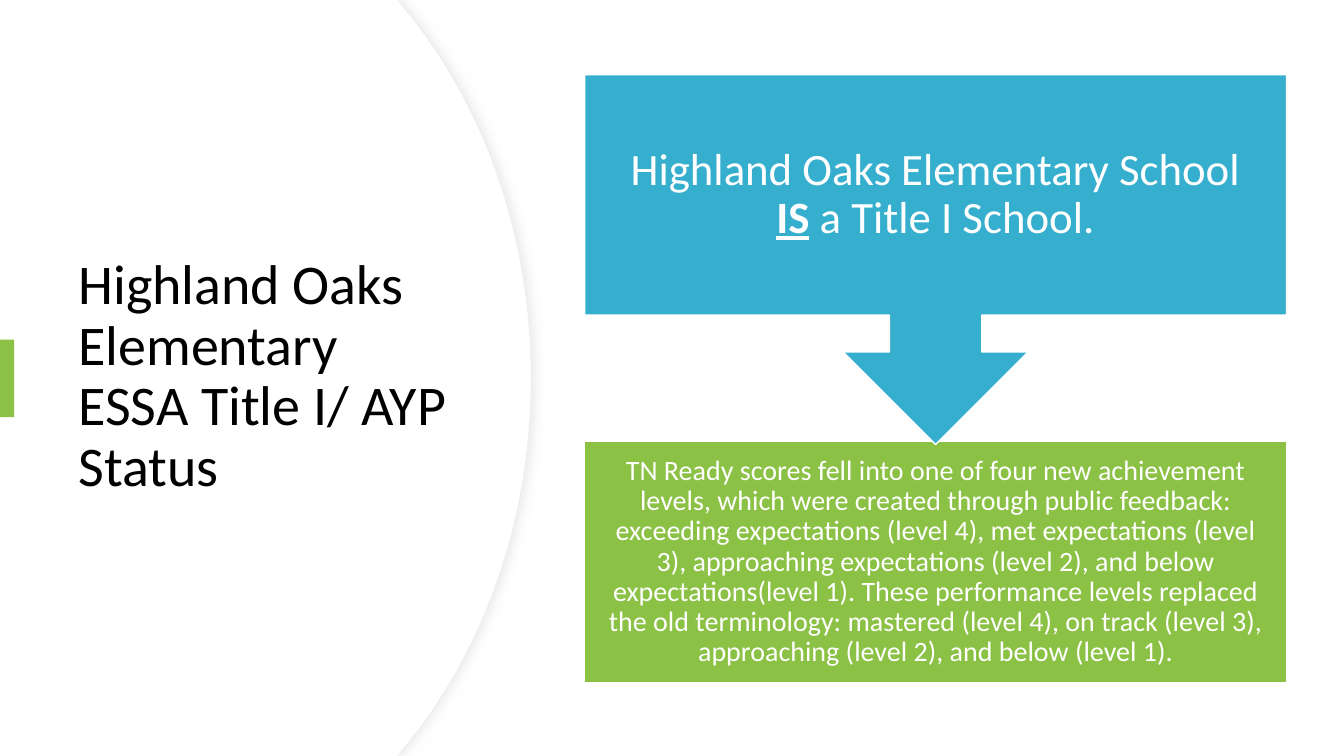
from lxml.etree import SubElement
from pptx import Presentation
from pptx.dml.color import RGBColor
from pptx.enum.shapes import MSO_SHAPE as Preset
from pptx.enum.text import MSO_ANCHOR as Anchor, PP_ALIGN as Align
from pptx.oxml.ns import qn
from pptx.util import Pt

PX = 9144  # 100 px to the inch
CURVE_STEPS = 24
COLORS = {"white": "FFFFFF", "black": "000000", "green": "8BC145",
          "blue": "36AFCE", "edge": "EFEFEF", "shade": "D9D9D9"}


def paint(shape, fill, line=None, width=1):
    shape.shadow.inherit = False
    shape.fill.solid()
    shape.fill.fore_color.rgb = RGBColor.from_string(COLORS[fill])
    if line:
        shape.line.color.rgb = RGBColor.from_string(COLORS[line])
        shape.line.width = Pt(width)
    else:
        shape.line.fill.background()


def write(shape, runs, size, color, align, inset):
    """Fill one paragraph with (text, emphasised) runs; None is a line break."""
    frame = shape.text_frame
    frame.word_wrap = True
    frame.vertical_anchor = Anchor.MIDDLE
    frame.margin_left = frame.margin_right = inset * PX
    frame.margin_top = frame.margin_bottom = inset * PX
    paragraph = frame.paragraphs[0]
    paragraph.alignment = align
    paragraph.line_spacing = 0.9
    for part in runs:
        if part is None:
            paragraph.add_line_break()
            continue
        text, emphasised = part
        run = paragraph.add_run()
        run.text = text
        font = run.font
        font.name = "Calibri"
        font.size = Pt(size)
        font.bold = font.underline = emphasised
        font.color.rgb = RGBColor.from_string(COLORS[color])


deck = Presentation()
deck.slide_width, deck.slide_height = 1333 * PX, 750 * PX
slide = deck.slides.add_slide(deck.slide_layouts[6])
shapes = slide.shapes

# Curved title panel: a shadowed edge under a plain cover one px narrower
for right, edge in ((527, "edge"), (526, None)):
    shoulder = right - 126
    curves = (
        ((shoulder, 8), (right - 48, 102), (right, 232), (right, 375)),
        ((right, 375), (right, 518), (right - 48, 648), (shoulder, 742)),
    )
    outline = [(394, 0)]
    for curve in curves:
        for step in range(CURVE_STEPS + 1):
            t = step / CURVE_STEPS
            weights = ((1 - t) ** 3, 3 * t * (1 - t) ** 2, 3 * t ** 2 * (1 - t), t ** 3)
            outline.append(tuple(sum(w * point[axis] for w, point in zip(weights, curve))
                                 for axis in (0, 1)))
    outline += [(394, 750), (0, 750)]
    builder = shapes.build_freeform(0, 0)
    builder.add_line_segments([(x * PX, y * PX) for x, y in outline], close=True)
    panel = builder.convert_to_shape()
    paint(panel, "white", edge, 0.75)
    if edge:
        effects = panel._element.spPr.find(qn("a:effectLst"))
        shadow = SubElement(effects, qn("a:outerShdw"), blurRad=str(Pt(7)),
                            dist=str(Pt(3)), dir="0", algn="l", rotWithShape="0")
        shade = SubElement(shadow, qn("a:srgbClr"), val=COLORS["shade"])
        SubElement(shade, qn("a:alpha"), val="50000")

title = shapes.add_textbox(68 * PX, 127 * PX, 394 * PX, 495 * PX)
write(title, [("Highland Oaks Elementary", False), None, ("ESSA Title I/ AYP Status", False)],
      40, "black", Align.LEFT, 10)

accent = shapes.add_shape(Preset.RECTANGLE, 0, 337 * PX, 14 * PX, 77 * PX)
paint(accent, "green")

# Status callout pointing down to the achievement levels
left, width, box_height = 580 * PX, 696 * PX, 239 * PX
levels = shapes.add_shape(Preset.RECTANGLE, left, 438 * PX, width, box_height)
paint(levels, "green", "white")
write(levels, [(
    "TN Ready scores fell into one of four new achievement levels, which were created "
    "through public feedback: exceeding expectations (level 4), met expectations (level 3), "
    "approaching expectations (level 2), and below expectations(level 1). These performance "
    "levels replaced the old terminology: mastered (level 4), on track (level 3), "
    "approaching (level 2), and below (level 1).", False)],
    20, "white", Align.CENTER, 16)

callout = shapes.add_shape(Preset.UP_ARROW_CALLOUT, left, 74 * PX, width, 367 * PX)
callout.rotation = 180
paint(callout, "blue", "white")
status = shapes.add_textbox(left, 74 * PX, width, box_height)
write(status, [("Highland Oaks Elementary School ", False), ("IS", True),
               (" a Title I School.", False)],
      32, "white", Align.CENTER, 25)

deck.save("out.pptx")
